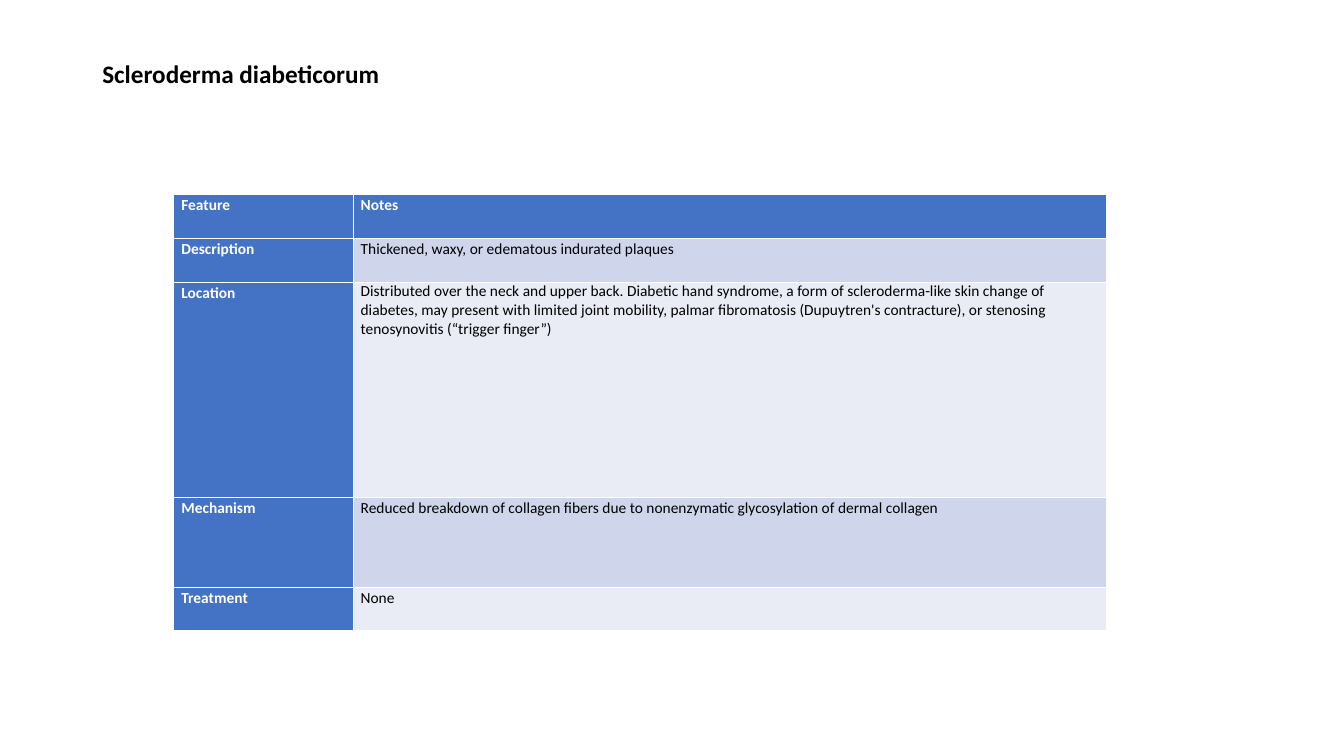
from pptx import Presentation
from pptx.dml.color import RGBColor
from pptx.enum.text import MSO_ANCHOR
from pptx.util import Cm, Pt

TOP = MSO_ANCHOR.TOP
BLUE, WHITE, BLACK = "4472C4", "FFFFFF", "000000"
BANDS = ["E9EBF5", "CFD5EA"]


def rgb(hex_code):
    return RGBColor.from_string(hex_code)


def style(paragraph, size, color, bold, spacing):
    paragraph.font.name = "Calibri"
    paragraph.font.size = Pt(size)
    paragraph.font.bold = bold
    paragraph.font.color.rgb = rgb(color)
    paragraph.line_spacing = spacing


features = [
    ("Feature", "Notes", 1.1),
    ("Description", "Thickened, waxy, or edematous indurated plaques", 1.1),
    ("Location", "Distributed over the neck and upper back. Diabetic hand syndrome, "
     "a form of scleroderma-like skin change of diabetes, may present with limited "
     "joint mobility, palmar fibromatosis (Dupuytren's contracture), or stenosing "
     "tenosynovitis (“trigger finger”)", 5.42),
    ("Mechanism", "Reduced breakdown of collagen fibers due to nonenzymatic "
     "glycosylation of dermal collagen", 2.27),
    ("Treatment", "None", 1.1),
]

prs = Presentation()
prs.slide_width, prs.slide_height = Cm(33.87), Cm(19.05)
slide = prs.slides.add_slide(prs.slide_layouts[6])

title = slide.shapes.add_textbox(Cm(2.33), Cm(1.01), Cm(29.21), Cm(3.68)).text_frame
title.word_wrap = True
title.vertical_anchor = TOP
title.margin_top = Cm(0.55)
title.text = "Scleroderma diabeticorum"
style(title.paragraphs[0], 18, BLACK, True, 0.9)

table = slide.shapes.add_table(
    len(features), 2, Cm(4.38), Cm(4.91), Cm(23.52), Cm(10.99)).table
table.first_col = True
table.columns[0].width, table.columns[1].width = Cm(4.52), Cm(19)

for row, (feature, note, height) in enumerate(features):
    table.rows[row].height = Cm(height)
    for column, wording in enumerate((feature, note)):
        heading = row == 0 or column == 0
        cell = table.cell(row, column)
        cell.margin_left = cell.margin_right = Cm(0.19)
        cell.margin_top = cell.margin_bottom = 0
        cell.vertical_anchor = TOP
        cell.fill.solid()
        cell.fill.fore_color.rgb = rgb(BLUE if heading else BANDS[row % 2])
        cell.text = wording
        spacing = 1 if wording.startswith("Distributed") else 1.07
        style(cell.text_frame.paragraphs[0], 11, WHITE if heading else BLACK,
              heading, spacing)

prs.save("out.pptx")
